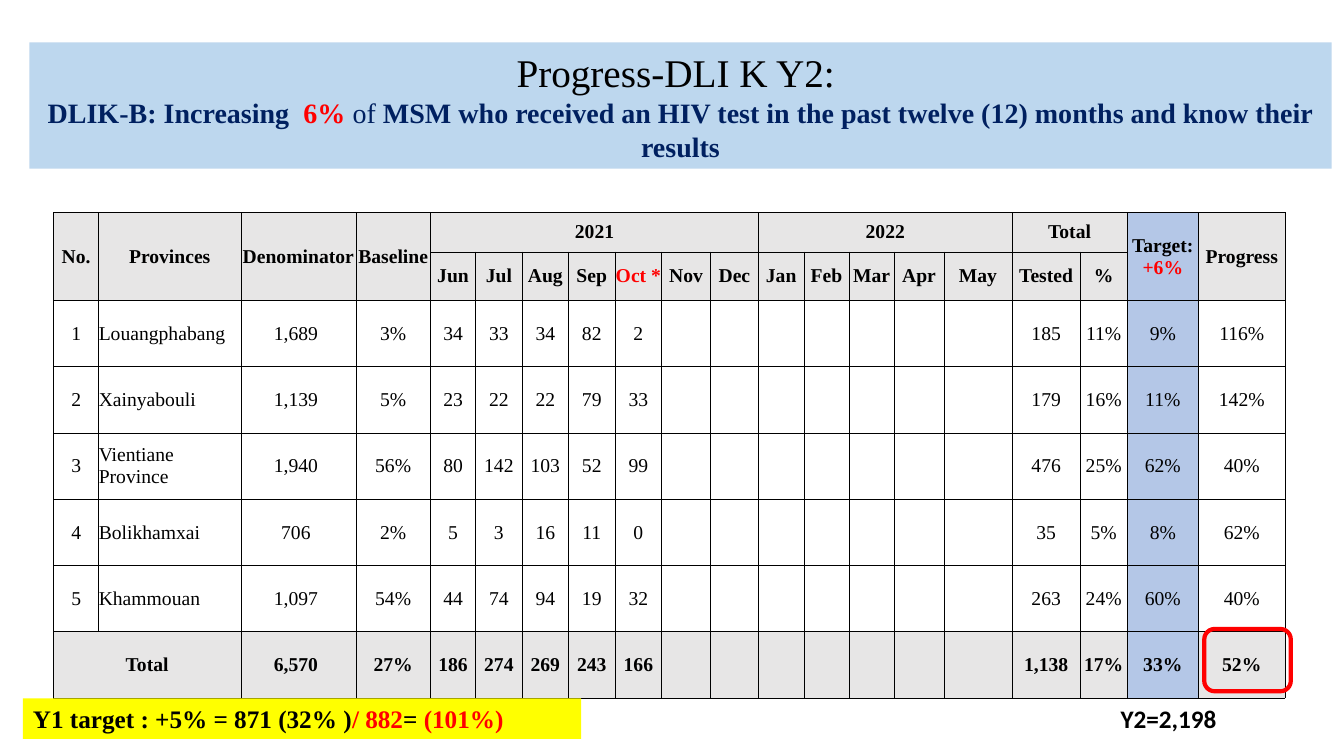
from dataclasses import dataclass
from lxml import etree
from pptx import Presentation
from pptx.dml.color import RGBColor
from pptx.enum.shapes import MSO_SHAPE as SHAPE
from pptx.enum.text import MSO_ANCHOR as ANCHOR, MSO_AUTO_SIZE as AUTO, PP_ALIGN as ALIGN
from pptx.oxml.ns import qn
from pptx.util import Cm, Pt


@dataclass(frozen=True)
class Theme:
    serif: str = "Times New Roman"
    sans: str = "Calibri"
    black: str = "000000"
    red: str = "FF0000"
    navy: str = "002060"
    banner: str = "BDD7EE"
    header: str = "E7E6E6"
    target: str = "B4C7E7"
    yellow: str = "FFFF00"
    title: int = 28
    subtitle: int = 20
    note: int = 18
    table: int = 14


T = Theme()

COLUMN_WIDTHS = [1.14, 3.58, 2.9, 1.88, 1.14, 1.17, 1.17, 1.17, 1.18, 1.22,
                 1.22, 1.14, 1.14, 1.14, 1.25, 1.72, 1.72, 1.18, 1.8, 2.18]
ROW_HEIGHTS = [0.99, 1.22] + [1.67] * 6
PROVINCE, TARGET, TOTAL_ROW = 1, 18, 7
FUTURE_MONTHS = [""] * 7
MONTHS = "Jun Jul Aug Sep Oct* Nov Dec Jan Feb Mar Apr May".replace("*", "").split()
MONTHS[4] = [("Oct *", T.red)]
ROWS = [
    ["No.", "Provinces", "Denominator", "Baseline", "2021", *[""] * 6, "2022", *[""] * 4,
     "Total", "", [("Target:", T.black), "\n", ("+6%", T.red)], "Progress"],
    [*[""] * 4, *MONTHS, "Tested", "%", "", ""],
    ["1", "Louangphabang", "1,689 ", "3%", "34", "33", "34", "82", "2",
     *FUTURE_MONTHS, "185", "11%", "9%", "116%"],
    ["2", "Xainyabouli", "1,139 ", "5%", "23", "22", "22", "79", "33",
     *FUTURE_MONTHS, "179", "16%", "11%", "142%"],
    ["3", "Vientiane Province", "1,940 ", "56%", "80", "142", "103", "52", "99",
     *FUTURE_MONTHS, "476", "25%", "62%", "40%"],
    ["4", "Bolikhamxai", "706 ", "2%", "5", "3", "16", "11", "0",
     *FUTURE_MONTHS, "35", "5%", "8%", "62%"],
    ["5", "Khammouan", "1,097 ", "54%", "44", "74", "94", "19", "32",
     *FUTURE_MONTHS, "263", "24%", "60%", "40%"],
    ["Total", "", "6,570 ", "27%", "186", "274", "269", "243", "166",
     *FUTURE_MONTHS, "1,138", "17%", "33%", "52%"],
]
MERGES = [(0, col, 1, col) for col in (0, 1, 2, 3, 18, 19)] + [
    (0, 4, 0, 10), (0, 11, 0, 15), (0, 16, 0, 17), (7, 0, 7, 1)]


def rgb(color):
    return RGBColor.from_string(color)


def style_paragraph(p, size, bold=None, color=T.black, align=ALIGN.LEFT, font=T.serif):
    p.alignment = align
    p.font.name = font
    p.font.size = Pt(size)
    p.font.bold = bold
    p.font.color.rgb = rgb(color)


def add_runs(p, parts):
    for part in parts:
        if part == "\n":
            p.add_line_break()
            continue
        text, color, *bold = part
        r = p.add_run()
        r.text = text
        r.font.color.rgb = rgb(color)
        if bold:
            r.font.bold = bold[0]


def add_box(s, kind, left, top, width, height, fill=None, outline=None):
    sp = s.shapes.add_shape(kind, Cm(left), Cm(top), Cm(width), Cm(height))
    sp.shadow.inherit = False
    if fill:
        sp.fill.solid()
        sp.fill.fore_color.rgb = rgb(fill)
    else:
        sp.fill.background()
    if outline:
        sp.line.color.rgb = rgb(outline)
        sp.line.width = Pt(3)
    else:
        sp.line.fill.background()
    return sp


def prepare_text(sp, anchor=ANCHOR.TOP):
    tf = sp.text_frame
    tf.word_wrap = True
    tf.auto_size = AUTO.SHAPE_TO_FIT_TEXT
    tf.vertical_anchor = anchor
    return tf


def add_banner(s):
    tf = prepare_text(add_box(s, SHAPE.RECTANGLE, 0.74, 1.07, 32.82, 3.18, T.banner), ANCHOR.MIDDLE)
    p = tf.paragraphs[0]
    p.text = "Progress-DLI K Y2: "
    style_paragraph(p, T.title, align=ALIGN.CENTER)
    p = tf.add_paragraph()
    style_paragraph(p, T.subtitle, color=T.navy, align=ALIGN.CENTER)
    add_runs(p, [
        ("DLIK-B: Increasing  ", T.navy, True),
        ("6% ", T.red, True),
        ("of ", T.navy, False),
        ("MSM who received an HIV test in the past twelve (12) months and know their results",
         T.navy, True),
    ])


def add_borders(cell):
    props = cell._tc.get_or_add_tcPr()
    for index, side in enumerate(("lnL", "lnR", "lnT", "lnB")):
        line = etree.Element(qn(f"a:{side}"), w=str(Pt(0.5)))
        fill = etree.SubElement(line, qn("a:solidFill"))
        etree.SubElement(fill, qn("a:srgbClr"), val=T.black)
        props.insert(index, line)


def fill_cell(cell, content, row, col):
    shaded = row < 2 or row == TOTAL_ROW
    cell.margin_left = cell.margin_right = cell.margin_top = cell.margin_bottom = 0
    cell.vertical_anchor = ANCHOR.MIDDLE
    if col == TARGET or shaded:
        cell.fill.solid()
        cell.fill.fore_color.rgb = rgb(T.target if col == TARGET else T.header)
    else:
        cell.fill.background()
    add_borders(cell)
    p = cell.text_frame.paragraphs[0]
    align = ALIGN.LEFT if col == PROVINCE and not shaded else ALIGN.CENTER
    style_paragraph(p, T.table, bold=shaded, align=align)
    if isinstance(content, list):
        add_runs(p, content)
    elif content:
        p.add_run().text = content


def add_progress_table(s):
    frame = s.shapes.add_table(len(ROWS), len(COLUMN_WIDTHS), Cm(1.35), Cm(5.36),
                               Cm(sum(COLUMN_WIDTHS)), Cm(sum(ROW_HEIGHTS)))
    table = frame.table
    table.first_row = table.horz_banding = False
    for column, width in zip(table.columns, COLUMN_WIDTHS):
        column.width = Cm(width)
    for row, height in zip(table.rows, ROW_HEIGHTS):
        row.height = Cm(height)
    for i, values in enumerate(ROWS):
        for j, content in enumerate(values):
            fill_cell(table.cell(i, j), content, i, j)
    for top, left, bottom, right in MERGES:
        table.cell(top, left).merge(table.cell(bottom, right))


def add_notes_line(s):
    first_year = add_box(s, SHAPE.RECTANGLE, 0.58, 17.6, 14.07, 1.02, T.yellow)
    p = prepare_text(first_year).paragraphs[0]
    style_paragraph(p, T.note, bold=True)
    add_runs(p, [("Y1 target : +5% = 871 (32% )", T.black), ("/ 882", T.red),
                 ("=", T.black), (" (101%)", T.red)])
    second_year = s.shapes.add_textbox(Cm(27.99), Cm(17.6), Cm(3.45), Cm(1.02))
    p = prepare_text(second_year).paragraphs[0]
    p.text = "Y2=2,198"
    style_paragraph(p, T.note, bold=True, font=T.sans)


def main():
    prs = Presentation()
    prs.slide_width, prs.slide_height = Cm(33.87), Cm(19.05)
    s = prs.slides.add_slide(prs.slide_layouts[6])
    add_banner(s)
    add_progress_table(s)
    add_box(s, SHAPE.ROUNDED_RECTANGLE, 30.35, 15.85, 2.18, 1.57, outline=T.red)
    add_notes_line(s)
    prs.save("out.pptx")


if __name__ == "__main__":
    main()
